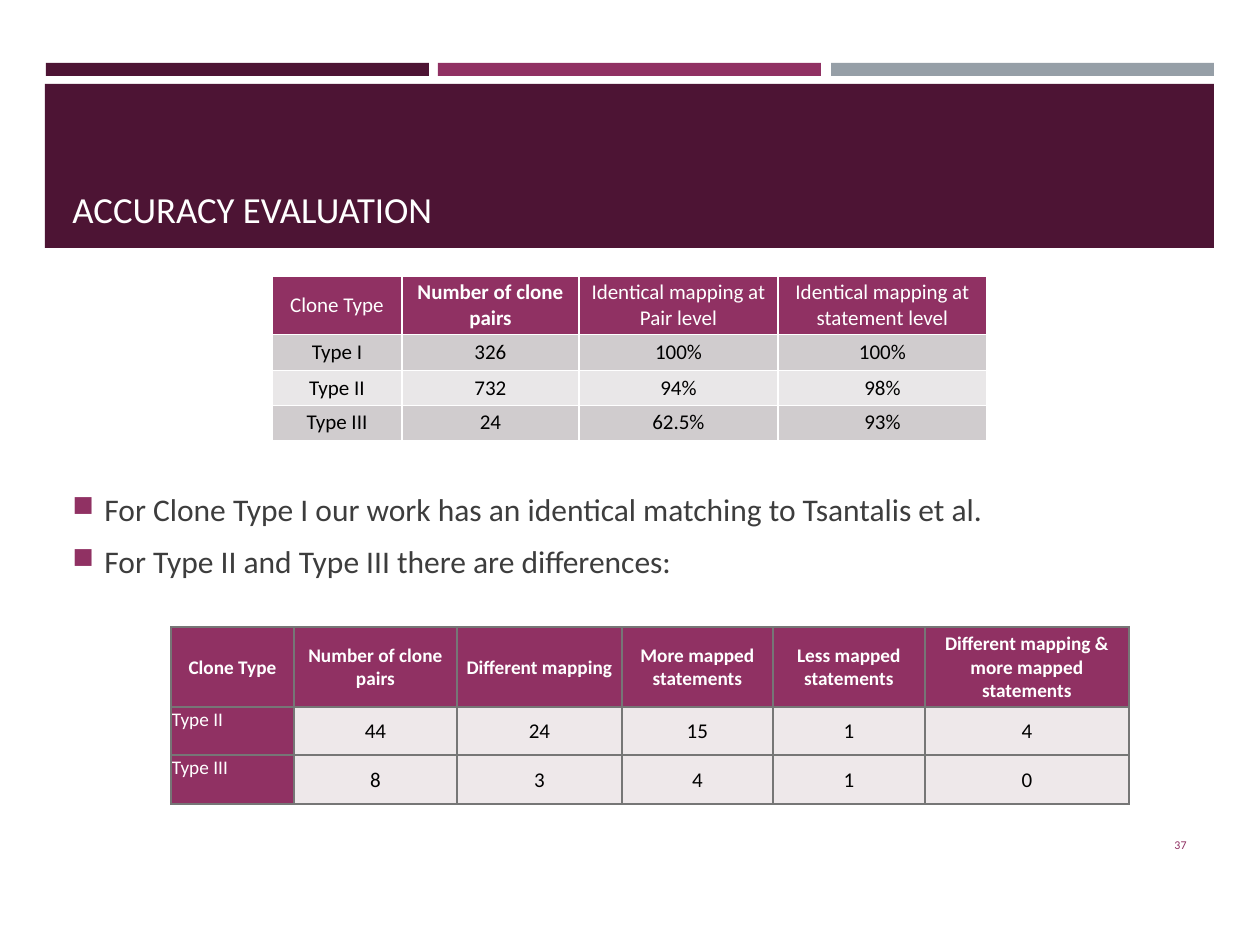
from dataclasses import dataclass

from lxml.etree import SubElement
from pptx import Presentation
from pptx.dml.color import RGBColor
from pptx.enum.shapes import MSO_SHAPE
from pptx.enum.text import MSO_ANCHOR, PP_ALIGN
from pptx.oxml.ns import qn
from pptx.util import Emu, Pt

EMU_PER_PX = 914400 // 126
FONT = "Calibri"

PLUM = RGBColor(0x4D, 0x14, 0x34)
MAGENTA = RGBColor(0x90, 0x31, 0x63)
SLATE = RGBColor(0x96, 0x9F, 0xA7)
WHITE = RGBColor(0xFF, 0xFF, 0xFF)
BLACK = RGBColor(0x00, 0x00, 0x00)
CHARCOAL = RGBColor(0x3D, 0x3D, 0x3D)
BORDER_GRAY = RGBColor(0x76, 0x76, 0x76)
DARK_ROW = RGBColor(0xD0, 0xCC, 0xCE)
LIGHT_ROW = RGBColor(0xE9, 0xE7, 0xE8)
PINK_ROW = RGBColor(0xEE, 0xE8, 0xEA)


@dataclass(frozen=True)
class Area:
    left: int
    top: int
    width: int
    height: int

    def emu(self) -> list[Emu]:
        return [px(n) for n in (self.left, self.top, self.width, self.height)]


@dataclass(frozen=True)
class Grid:
    """A table: where it stands, what it says and how its cells look."""
    left: int
    top: int
    columns: list[int]
    heights: list[int]
    rows: list[list[str]]
    row_fills: list[RGBColor]
    border: RGBColor
    margins: tuple[int, int, int, int]
    header_size: int
    bold_headers: set[int]
    label_column: bool = False


BARS = [
    (Area(46, 63, 383, 13), PLUM),
    (Area(438, 63, 383, 13), MAGENTA),
    (Area(831, 63, 383, 13), SLATE),
    (Area(45, 84, 1169, 164), PLUM),
]

ACCURACY = Grid(
    left=272, top=276, columns=[130, 177, 199, 209], heights=[58, 36, 35, 35],
    rows=[
        ["Clone Type", "Number of clone pairs", "Identical mapping at Pair level",
         "Identical mapping at statement level"],
        ["Type I", "326", "100%", "100%"],
        ["Type II", "732", "94%", "98%"],
        ["Type III", "24", "62.5%", "93%"],
    ],
    row_fills=[MAGENTA, DARK_ROW, LIGHT_ROW, DARK_ROW],
    border=WHITE, margins=(8, 4, 8, 4), header_size=12, bold_headers={1},
)

DIFFERENCES = Grid(
    left=171, top=627, columns=[123, 163, 165, 151, 152, 204], heights=[80, 48, 49],
    rows=[
        ["Clone Type", "Number of clone pairs", "Different mapping",
         "More mapped statements", "Less mapped statements",
         "Different mapping & more mapped statements"],
        ["Type II", "44", "24", "15", "1", "4"],
        ["Type III", "8", "3", "4", "1", "0"],
    ],
    row_fills=[MAGENTA, PINK_ROW, PINK_ROW],
    border=BORDER_GRAY, margins=(1, 1, 1, 0), header_size=11,
    bold_headers=set(range(6)), label_column=True,
)

FINDINGS = [
    "For Clone Type I our work has an identical matching to Tsantalis et al.",
    "For Type II and Type III there are differences:",
]


def px(count: int) -> Emu:
    return Emu(count * EMU_PER_PX)


def write(para, text: str, *, size: float, color: RGBColor, bold: bool = False,
          align=PP_ALIGN.LEFT) -> None:
    para.alignment = align
    span = para.add_run()
    span.text = text
    span.font.name = FONT
    span.font.size = Pt(size)
    span.font.bold = bold
    span.font.color.rgb = color


def add_bar(page, area: Area, color: RGBColor) -> None:
    bar = page.shapes.add_shape(MSO_SHAPE.RECTANGLE, *area.emu())
    bar.shadow.inherit = False
    bar.fill.solid()
    bar.fill.fore_color.rgb = color
    bar.line.fill.background()


def add_frame(page, area: Area, anchor=MSO_ANCHOR.TOP):
    frame = page.shapes.add_textbox(*area.emu()).text_frame
    frame.word_wrap = True
    frame.vertical_anchor = anchor
    return frame


def set_bullet(para) -> None:
    """Hang a small magenta square in front of the paragraph."""
    properties = para._p.get_or_add_pPr()
    properties.set("marL", str(px(32)))
    properties.set("indent", str(-px(32)))
    color = SubElement(properties, qn("a:buClr"))
    SubElement(color, qn("a:srgbClr"), val=str(MAGENTA))
    SubElement(properties, qn("a:buSzPct"), val="92000")
    SubElement(properties, qn("a:buChar"), char="■")


def add_bullets(page, area: Area, lines: list[str]) -> None:
    frame = add_frame(page, area)
    for index, line in enumerate(lines):
        para = frame.add_paragraph() if index else frame.paragraphs[0]
        para.space_before = Pt(3.6)
        para.space_after = Pt(4.5)
        set_bullet(para)
        write(para, line, size=18, color=CHARCOAL)


def set_borders(cell, color: RGBColor) -> None:
    properties = cell._tc.get_or_add_tcPr()
    for side in ("a:lnL", "a:lnR", "a:lnT", "a:lnB"):
        line = SubElement(properties, qn(side), w=str(Pt(1)))
        fill = SubElement(line, qn("a:solidFill"))
        SubElement(fill, qn("a:srgbClr"), val=str(color))


def add_grid(page, grid: Grid) -> None:
    area = Area(grid.left, grid.top, sum(grid.columns), sum(grid.heights))
    table = page.shapes.add_table(len(grid.rows), len(grid.columns), *area.emu()).table
    for column, width in zip(table.columns, grid.columns):
        column.width = px(width)
    for row, height in zip(table.rows, grid.heights):
        row.height = px(height)

    for r, texts in enumerate(grid.rows):
        for c, text in enumerate(texts):
            cell = table.cell(r, c)
            is_header = r == 0
            is_label = grid.label_column and c == 0 and not is_header
            colored = is_header or is_label
            set_borders(cell, grid.border)
            cell.fill.solid()
            cell.fill.fore_color.rgb = MAGENTA if is_label else grid.row_fills[r]
            (cell.margin_left, cell.margin_top,
             cell.margin_right, cell.margin_bottom) = map(px, grid.margins)
            cell.vertical_anchor = MSO_ANCHOR.TOP if is_label else MSO_ANCHOR.MIDDLE
            write(cell.text_frame.paragraphs[0], text,
                  size=grid.header_size if colored else 12,
                  color=WHITE if colored else BLACK,
                  bold=is_header and c in grid.bold_headers,
                  align=PP_ALIGN.LEFT if is_label else PP_ALIGN.CENTER)


def main() -> None:
    deck = Presentation()
    deck.slide_width, deck.slide_height = px(1260), px(945)
    page = deck.slides.add_slide(deck.slide_layouts[6])

    for area, color in BARS:
        add_bar(page, area, color)

    title = add_frame(page, Area(60, 97, 1140, 140), MSO_ANCHOR.BOTTOM)
    write(title.paragraphs[0], "ACCURACY EVALUATION", size=21, color=WHITE)

    add_bullets(page, Area(60, 484, 1140, 132), FINDINGS)

    number = add_frame(page, Area(1091, 820, 108, 50), MSO_ANCHOR.MIDDLE)
    write(number.paragraphs[0], "37", size=6.8, color=MAGENTA, align=PP_ALIGN.RIGHT)

    for grid in (ACCURACY, DIFFERENCES):
        add_grid(page, grid)

    deck.save("out.pptx")


if __name__ == "__main__":
    main()
